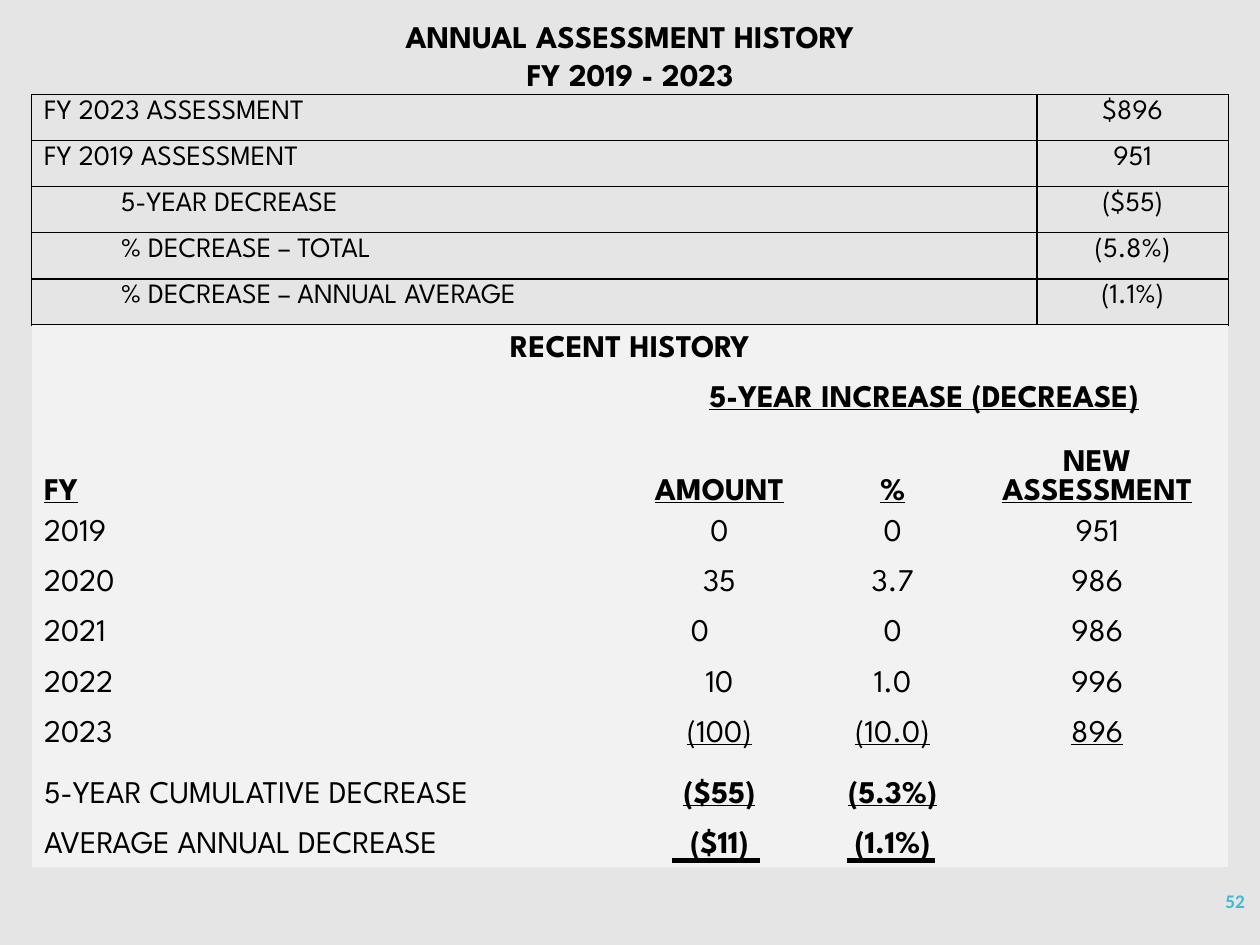
from dataclasses import dataclass

from lxml.etree import SubElement
from pptx import Presentation
from pptx.dml.color import RGBColor
from pptx.enum.shapes import MSO_CONNECTOR
from pptx.enum.text import MSO_ANCHOR, PP_ALIGN
from pptx.oxml import parse_xml
from pptx.oxml.ns import nsdecls, qn
from pptx.util import Inches, Pt


@dataclass(frozen=True)
class Theme:
    """Colours, fonts and type sizes of the slide."""
    background: str = "E5E5E5"
    panel: str = "F2F2F2"
    ink: str = "000000"
    accent: str = "40BAD2"
    face: str = "League Spartan"
    number_face: str = "Calibri"
    heading: int = 18
    summary: int = 16
    number: int = 11
    no_grid: str = "{2D5ABB26-0587-4C30-8999-92F81FD0307C}"


class SlideBuilder:
    """Draws styled elements on one slide."""

    def __init__(self, slide, theme):
        self.slide = slide
        self.theme = theme
        fill = slide.background.fill
        fill.solid()
        fill.fore_color.rgb = RGBColor.from_string(theme.background)

    def set_text(self, frame, text, align=PP_ALIGN.LEFT, color=None, spacing=None, **formats):
        """Fill a text frame, one paragraph per line of text."""
        frame.text = text
        values = {"name": self.theme.face, "size": Pt(self.theme.heading),
                  "bold": False, "underline": False} | formats
        for paragraph in frame.paragraphs:
            paragraph.alignment = align
            if spacing:
                paragraph.line_spacing = spacing
            for run in paragraph.runs:
                for attribute, value in values.items():
                    setattr(run.font, attribute, value)
                run.font.color.rgb = RGBColor.from_string(color or self.theme.ink)

    def title(self, text, left, top, width, height):
        """Place the slide title."""
        heading = self.slide.shapes.title
        bounds = {"left": left, "top": top, "width": width, "height": height}
        for attribute, value in bounds.items():
            setattr(heading, attribute, Inches(value))
        heading.text_frame.vertical_anchor = MSO_ANCHOR.TOP
        self.set_text(heading.text_frame, text, PP_ALIGN.CENTER, spacing=Pt(21.9), bold=True)

    def table(self, left, top, columns, rows):
        """Add an unstyled table sized by its columns and rows."""
        frame = self.slide.shapes.add_table(
            len(rows), len(columns), Inches(left), Inches(top),
            Inches(sum(columns)), Inches(sum(rows)))
        table = frame.table
        table.first_row = table.horz_banding = False
        table._tbl.tblPr.find(qn("a:tableStyleId")).text = self.theme.no_grid
        for column, width in zip(table.columns, columns):
            column.width = Inches(width)
        for row, height in zip(table.rows, rows):
            row.height = Inches(height)
        return table

    def cell(self, cell, text, anchor=MSO_ANCHOR.TOP, fill=None, **formats):
        """Set the text and fill of one table cell."""
        cell.margin_top = Inches(0.04)
        cell.vertical_anchor = anchor
        if fill:
            cell.fill.solid()
            cell.fill.fore_color.rgb = RGBColor.from_string(fill)
        else:
            cell.fill.background()
        self.set_text(cell.text_frame, text, **formats)

    def borders(self, cell):
        """Outline one table cell on all sides."""
        for position, side in enumerate(("lnL", "lnR", "lnT", "lnB")):
            cell._tc.get_or_add_tcPr().insert(position, parse_xml(
                f'<a:{side} {nsdecls("a")} w="{Pt(1)}"><a:solidFill>'
                f'<a:srgbClr val="{self.theme.ink}"/></a:solidFill></a:{side}>'))

    def rule(self, left, top, width):
        """Add a heavy horizontal rule."""
        rule = self.slide.shapes.add_connector(
            MSO_CONNECTOR.STRAIGHT, Inches(left), Inches(top),
            Inches(left + width), Inches(top))
        rule.line.width = Pt(3)
        rule.line.color.rgb = RGBColor.from_string(self.theme.ink)
        SubElement(rule._element.spPr, qn("a:effectLst"))

    def page_number(self, text, left, top, width, height):
        """Add the page number."""
        box = self.slide.shapes.add_textbox(*map(Inches, (left, top, width, height)))
        box.text_frame.word_wrap = True
        box.text_frame.vertical_anchor = MSO_ANCHOR.MIDDLE
        self.set_text(box.text_frame, text, PP_ALIGN.RIGHT, self.theme.accent,
                      name=self.theme.number_face, size=Pt(self.theme.number), bold=True)


SUMMARY = [
    ("FY 2023 ASSESSMENT", "$896"),
    ("FY 2019 ASSESSMENT", "951"),
    ("5-YEAR DECREASE", "($55)"),
    ("% DECREASE – TOTAL", "(5.8%)"),
    ("% DECREASE – ANNUAL AVERAGE", "(1.1%)"),
]
PLAIN = {}
BOLD = {"bold": True}
UNDERLINED = {"underline": True}
STRONG = BOLD | UNDERLINED
MIDDLE, TOP, BOTTOM = MSO_ANCHOR.MIDDLE, MSO_ANCHOR.TOP, MSO_ANCHOR.BOTTOM
HISTORY = [
    (("RECENT HISTORY", "", "", ""), MIDDLE, BOLD, PLAIN),
    (("", "5-YEAR INCREASE (DECREASE)", "", ""), MIDDLE, PLAIN, STRONG),
    (("FY", "AMOUNT", "%", "NEW\nASSESSMENT"), BOTTOM, STRONG, STRONG),
    (("2019", "0", "0", "951"), TOP, PLAIN, PLAIN),
    (("2020", "35", "3.7", "986"), TOP, PLAIN, PLAIN),
    (("2021", "0", "0", "986"), TOP, PLAIN, PLAIN),
    (("2022", "10", "1.0", "996"), TOP, PLAIN, PLAIN),
    (("2023", "(100)", "(10.0)", "896"), TOP, PLAIN, UNDERLINED),
    (("5-YEAR CUMULATIVE DECREASE", "($55)", "(5.3%)", ""), BOTTOM, PLAIN, STRONG),
    (("AVERAGE ANNUAL DECREASE", "($11)", "(1.1%)", ""), BOTTOM, PLAIN, BOLD),
]


def add_summary(builder):
    """Build the five-year summary table."""
    summary = builder.table(0.25, 0.75, (7.98, 1.52), [1.83 / len(SUMMARY)] * len(SUMMARY))
    for row, texts in enumerate(SUMMARY):
        for column, text in enumerate(texts):
            entry = summary.cell(row, column)
            builder.cell(entry, text, size=Pt(builder.theme.summary),
                         align=PP_ALIGN.CENTER if column else PP_ALIGN.LEFT)
            builder.borders(entry)
            if row > 1 and column == 0:
                entry.margin_left = Inches(0.71)


def add_history(builder):
    """Build the yearly history table."""
    heights = [0.4, 0.4, 0.7] + [0.4] * 7
    history = builder.table(0.25, 2.58, (4.67, 1.58, 1.17, 2.08), heights)
    for row, (texts, anchor, label_format, value_format) in enumerate(HISTORY):
        for column, text in enumerate(texts):
            centred = column or row == 0
            builder.cell(history.cell(row, column), text, anchor, builder.theme.panel,
                         align=PP_ALIGN.CENTER if centred else PP_ALIGN.LEFT,
                         **(value_format if column else label_format))
    history.cell(0, 0).merge(history.cell(0, 3))
    history.cell(1, 1).merge(history.cell(1, 3))
    history.cell(2, 3).text_frame.paragraphs[0].runs[0].font.underline = False
    history.cell(5, 1).margin_right = Inches(0.41)


def main():
    """Build and save the slide."""
    presentation = Presentation()
    presentation.slide_width = Inches(10)
    presentation.slide_height = Inches(7.5)
    slide = presentation.slides.add_slide(presentation.slide_layouts[5])
    builder = SlideBuilder(slide, Theme())
    builder.title("ANNUAL ASSESSMENT HISTORY\nFY 2019 - 2023", 0.5, 0.08, 9, 0.71)
    add_summary(builder)
    add_history(builder)
    for left in (5.33, 6.72):
        builder.rule(left, 6.83, 0.7)
    builder.page_number("52", 8.72, 6.95, 1.26, 0.4)
    presentation.save("out.pptx")


if __name__ == "__main__":
    main()
